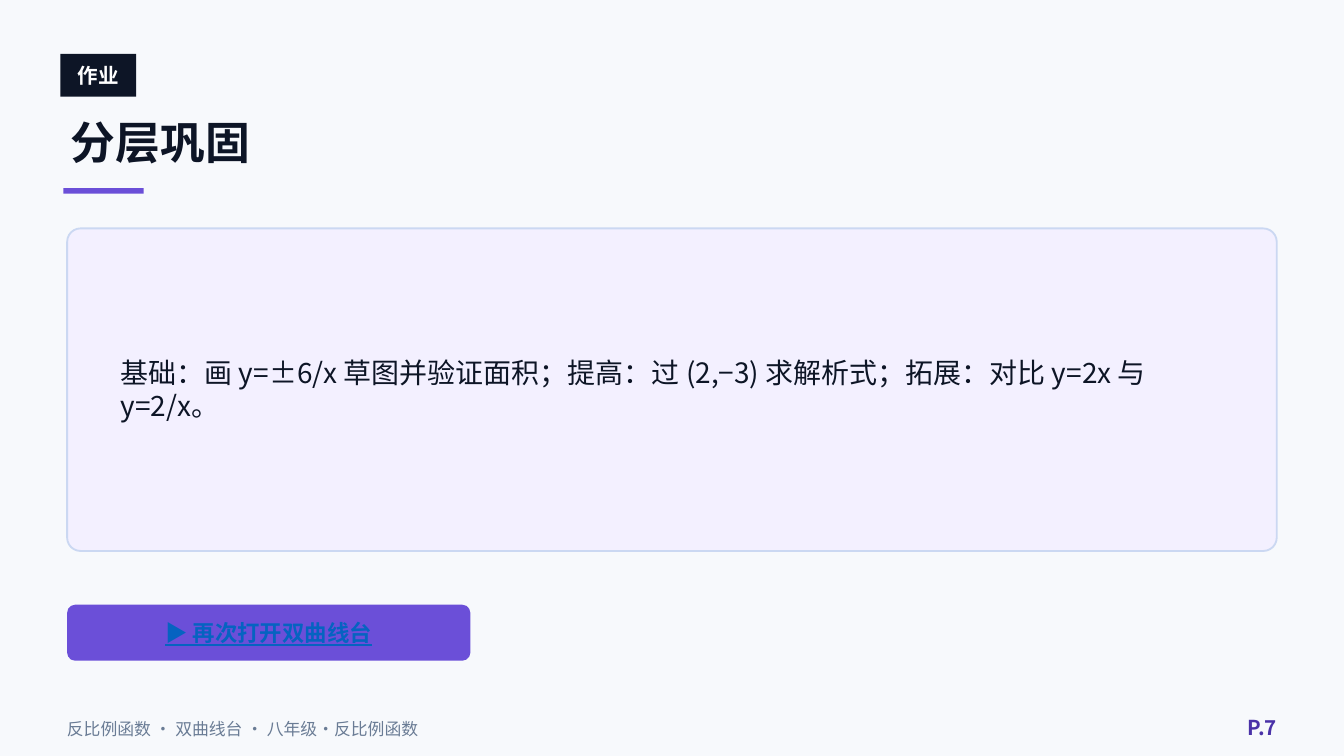
import pptx
import pptx.dml.color
import pptx.enum.shapes
import pptx.enum.text
import pptx.oxml.ns
import pptx.util
from lxml import etree

Pt = pptx.util.Pt
SHAPES = pptx.enum.shapes.MSO_SHAPE
ALIGN = pptx.enum.text.PP_ALIGN

FONT = "Noto Sans CJK SC"
INK = "0D1526"
VIOLET = "6B4FD8"
PAGE_WIDTH, PAGE_HEIGHT = 720, 405


def colour(value):
    return pptx.dml.color.RGBColor.from_string(value)


def add_block(page, place, fill, radius=0, line=None):
    """Filled rectangle, rounded when a corner radius in points is given."""
    kind = SHAPES.ROUNDED_RECTANGLE if radius else SHAPES.RECTANGLE
    block = page.shapes.add_shape(kind, *map(Pt, place))
    block.shadow.inherit = False
    if radius:
        block.adjustments[0] = radius / min(place[2:])
    block.fill.solid()
    block.fill.fore_color.rgb = colour(fill)
    if line:
        block.line.color.rgb = colour(line)
        block.line.width = Pt(1)
    else:
        block.line.fill.background()
    return block


def add_text(page, place, text, ink, align=ALIGN.LEFT, **formats):
    """Text box with one vertically centred paragraph."""
    box = page.shapes.add_textbox(*map(Pt, place))
    frame = box.text_frame
    frame.word_wrap = True
    frame.vertical_anchor = pptx.enum.text.MSO_ANCHOR.MIDDLE
    para = frame.paragraphs[0]
    para.alignment = align
    span = para.add_run()
    span.text = text
    span.font.color.rgb = colour(ink)
    for name, value in {"name": FONT, **formats}.items():
        setattr(span.font, name, value)
    # East Asian characters take their font from a separate element
    latin = span.font._element.find(pptx.oxml.ns.qn("a:latin"))
    east = etree.Element(pptx.oxml.ns.qn("a:ea"), typeface=FONT)
    latin.addnext(east)
    return box


def build_header(page, left, top):
    # Section tag
    add_block(page, (left, top, 40.5, 23), INK)
    add_text(page, (left, top - 0.5, 40.5, 24), "作业", "FFFFFF",
             ALIGN.CENTER, size=Pt(11), bold=True)
    # Title and accent bar
    add_text(page, (left - 1.5, top + 27.5, 648, 39.5), "分层巩固", INK,
             size=Pt(24), bold=True)
    add_block(page, (left + 1.5, top + 72, 43, 3), VIOLET)


def build_card(page, left, top, width, height):
    add_block(page, (left, top, width, height), "F3F0FF", 7.2, "CBD8F2")
    side, edge = 21.6, 18
    add_text(page, (left + side, top + edge, width - 2 * side, height - 2 * edge - 0.8),
             "基础：画 y=±6/x 草图并验证面积；提高：过 (2,−3) 求解析式；"
             "拓展：对比 y=2x 与 y=2/x。", INK, size=Pt(15))


def build_button(page, *place):
    add_block(page, place, VIOLET, 4.3)
    add_text(page, place, "▶ 再次打开双曲线台", "0563C1", ALIGN.CENTER,
             size=Pt(12), bold=True, underline=True)


def build_footer(page, left, top, width):
    add_text(page, (left, top + 1.2, 518, 20),
             "反比例函数 · 双曲线台 · 八年级·反比例函数", "6A7C95", size=Pt(9))
    number_width = 43.2
    add_text(page, (left + width - number_width, top, number_width, 21.6),
             "P.7", "4A32A8", ALIGN.RIGHT, size=Pt(11), bold=True)


def main():
    deck = pptx.Presentation()
    deck.slide_width, deck.slide_height = Pt(PAGE_WIDTH), Pt(PAGE_HEIGHT)
    page = deck.slides.add_slide(deck.slide_layouts[6])
    page.background.fill.solid()
    page.background.fill.fore_color.rgb = colour("F7F9FC")

    margin = 36
    build_header(page, 32.4, 28.8)
    build_card(page, margin, 122.4, PAGE_WIDTH - 2 * margin, 172.8)
    build_button(page, margin, 324, 216, 30)
    build_footer(page, 28.8, 379, 662.4)
    deck.save("out.pptx")


if __name__ == "__main__":
    main()
